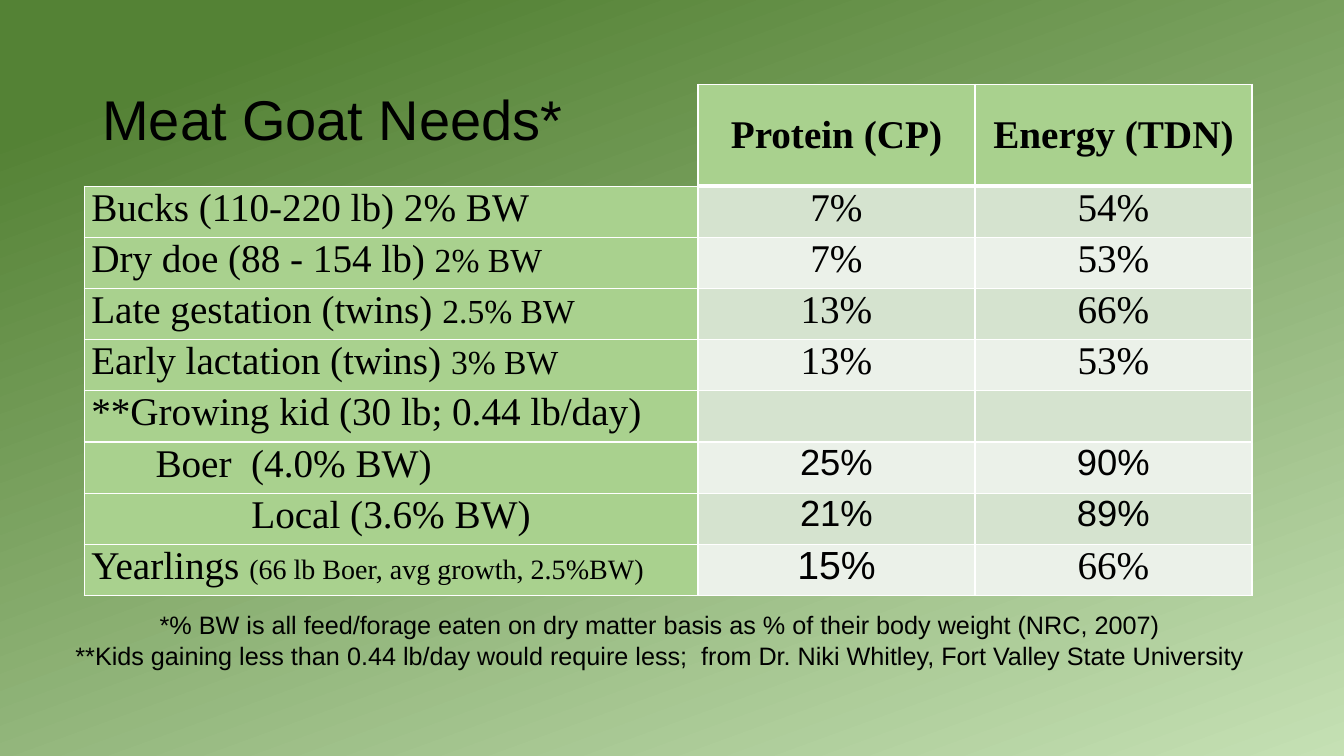
from typing import NamedTuple

from lxml import etree
from pptx import Presentation
from pptx.dml.color import RGBColor
from pptx.enum import text as t
from pptx.oxml import ns
from pptx.util import Cm, Pt

SANS, SERIF = "Arial", "Times New Roman"
BLACK, WHITE, GREEN = "000000", "FFFFFF", "A9D18E"
BANDS = "D5E3CF", "EBF1E9"
LEFT, MID = t.PP_ALIGN.LEFT, t.PP_ALIGN.CENTER


class Style(NamedTuple):
    size: float
    face: str = SERIF
    bold: bool = False
    align: t.PP_ALIGN = MID


class Need(NamedTuple):
    label: str
    protein: str = ""
    energy: str = ""
    note: str = ""
    small: float = 24
    indent: float = 0.18
    align: t.PP_ALIGN = LEFT
    styles: tuple[Style, Style] = (Style(28), Style(28))


HEAD = Style(28, bold=True)
KID = (Style(26, SANS),) * 2
TITLES = ["Protein (CP)", "Energy (TDN)"]
NEEDS = [
    Need("Bucks (110-220 lb) 2% BW", "7%", "54%"),
    Need("Dry doe (88 - 154 lb) ", "7%", "53%", "2% BW"),
    Need("Late gestation (twins) ", "13%", "66%", "2.5% BW"),
    Need("Early lactation (twins) ", "13%", "53%", "3% BW"),
    Need("**Growing kid (30 lb; 0.44 lb/day)"),
    Need("Boer  (4.0% BW)", "25%", "90%", indent=1.8, styles=KID),
    Need("Local (3.6% BW)", "21%", "89%", align=MID, styles=KID),
    Need("Yearlings ", "15%", "66%", "(66 lb Boer, avg growth, 2.5%BW)", 20,
         styles=(Style(28, SANS), Style(28))),
]
NOTES = [
    "*% BW is all feed/forage eaten on dry matter basis as % of their body weight (NRC, 2007)",
    "**Kids gaining less than 0.44 lb/day would require less;  from Dr. Niki Whitley, "
    "Fort Valley State University",
]


def rgb(code: str) -> RGBColor:
    return RGBColor.from_string(code)


def write(para, words: str, style: Style, note: str = "", small: float = 0) -> None:
    """Fill a paragraph, with an optional smaller note at its end."""
    para.alignment = style.align
    font = para.font
    font.name, font.bold = style.face, style.bold
    font.color.rgb = rgb(BLACK)
    main = para.add_run()
    main.text = words
    if note:
        main.font.size = Pt(style.size)
        tail = para.add_run()
        tail.text, tail.font.size = note, Pt(small)
    else:
        font.size = Pt(style.size)


def add_box(slide, left: float, top: float, width: float, height: float,
            lines: list[str], style: Style, anchor: t.MSO_ANCHOR) -> None:
    frame = slide.shapes.add_textbox(Cm(left), Cm(top), Cm(width), Cm(height)).text_frame
    frame.word_wrap, frame.vertical_anchor = True, anchor
    for i, line in enumerate(lines):
        para = frame.add_paragraph() if i else frame.paragraphs[0]
        write(para, line, style)


def edge(cell, widths: dict[str, float]) -> None:
    """Draw white cell borders; a width of zero hides that side."""
    props = cell._tc.get_or_add_tcPr()
    for side, width in widths.items():
        line = etree.SubElement(props, ns.qn(f"a:ln{side}"), w=str(Pt(width)))
        if width:
            fill = etree.SubElement(line, ns.qn("a:solidFill"))
            etree.SubElement(fill, ns.qn("a:srgbClr"), val=WHITE)
        else:
            etree.SubElement(line, ns.qn("a:noFill"))


def add_needs(slide) -> None:
    rows = len(NEEDS) + 1
    table = slide.shapes.add_table(rows, 3, Cm(2.12), Cm(2.12), Cm(29.43), Cm(12.89)).table
    table.first_row = table.horz_banding = False
    for col, width in zip(table.columns, (15.47, 6.98, 6.98)):
        col.width = Cm(width)
    for i, row in enumerate(table.rows):
        row.height = Cm(1.29 if i else 2.57)
        for j, cell in enumerate(row.cells):
            cell.margin_left = cell.margin_right = Cm(0.18)
            cell.margin_top = cell.margin_bottom = 0
            blank = i == j == 0
            edge(cell, {"L": 0 if blank else 1, "R": 1,
                        "T": 0 if blank else 3 if i == 1 and j else 1,
                        "B": 3 if i == 0 and j else 1})
            if blank:
                cell.fill.background()
                continue
            cell.fill.solid()
            cell.fill.fore_color.rgb = rgb(BANDS[(i - 1) % 2] if i and j else GREEN)

    for j, title in enumerate(TITLES, 1):
        cell = table.cell(0, j)
        cell.vertical_anchor = t.MSO_ANCHOR.MIDDLE
        write(cell.text_frame.paragraphs[0], title, HEAD)
    for i, need in enumerate(NEEDS, 1):
        name = table.cell(i, 0)
        name.margin_left = Cm(need.indent)
        write(name.text_frame.paragraphs[0], need.label,
              Style(28, align=need.align), need.note, need.small)
        for j, value in enumerate((need.protein, need.energy), 1):
            if value:
                write(table.cell(i, j).text_frame.paragraphs[0], value, need.styles[j - 1])


def main() -> None:
    deck = Presentation()
    deck.slide_width, deck.slide_height = Cm(33.87), Cm(19.05)
    slide = deck.slides.add_slide(deck.slide_layouts[6])
    back = slide.background.fill
    back.gradient()
    back.gradient_angle = 290
    for stop, (place, code) in zip(back.gradient_stops, ((0.11, "548235"), (1, "C5E0B4"))):
        stop.position, stop.color.rgb = place, rgb(code)
    add_box(slide, 2.33, 1.27, 18.2, 3.39, ["Meat Goat Needs*"],
            Style(40, SANS, align=LEFT), t.MSO_ANCHOR.MIDDLE)
    add_box(slide, 0.43, 15.24, 32.39, 1.8, NOTES, Style(18, SANS), t.MSO_ANCHOR.TOP)
    add_needs(slide)
    deck.save("out.pptx")


if __name__ == "__main__":
    main()
